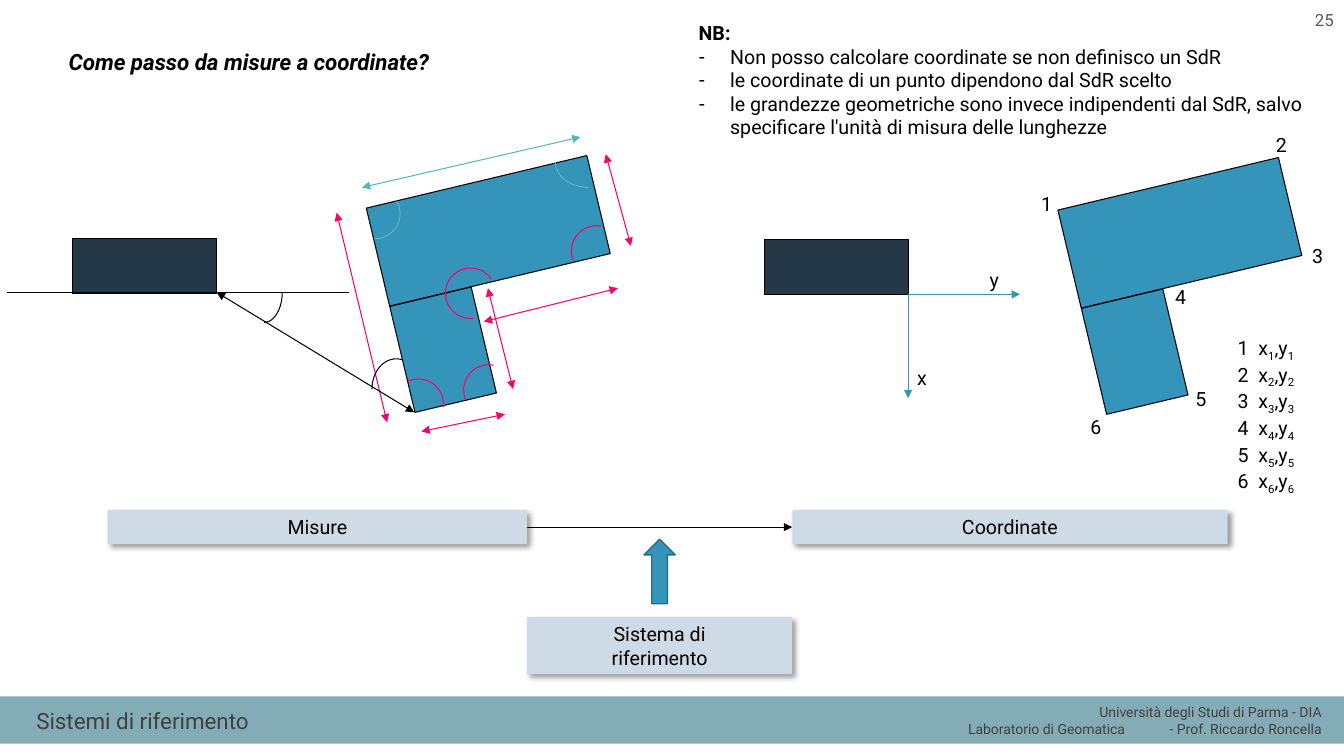
"""Build the slide that leads from measurements to coordinates."""
import pptx
import pptx.util
import pptx.dml.color
import pptx.enum.shapes
import pptx.enum.text
import pptx.oxml
import pptx.oxml.ns

Pt = pptx.util.Pt
MSO_SHAPE = pptx.enum.shapes.MSO_SHAPE
PP_ALIGN = pptx.enum.text.PP_ALIGN
MSO_ANCHOR = pptx.enum.text.MSO_ANCHOR
FONT = "Roboto"
COLORS = {
    "black": "000000", "grey": "404040", "number": "595959", "band": "84ACB6",
    "blue": "3494BA", "edge": "266D8A", "dark": "253848", "pale": "CEDBE6",
    "pink": "FF0066", "teal": "58B6C0",
}
SHADOW = (
    '<a:effectLst %s><a:outerShdw blurRad="50800" dist="38100" dir="2700000" '
    'algn="tl" rotWithShape="0"><a:srgbClr val="000000"><a:alpha val="40000"/>'
    '</a:srgbClr></a:outerShdw></a:effectLst>' % pptx.oxml.ns.nsdecls("a")
)


def rgb(name):
    return pptx.dml.color.RGBColor.from_string(COLORS[name])


def add_xml(parent, tag, **attrs):
    el = pptx.oxml.parse_xml("<a:%s %s/>" % (tag, pptx.oxml.ns.nsdecls("a")))
    for key, value in attrs.items():
        el.set(key, str(value))
    parent.append(el)
    return el


def style_run(r, size, color="black", bold=False, italic=False):
    r.font.name, r.font.size = FONT, Pt(size)
    r.font.bold, r.font.italic = bold, italic
    r.font.color.rgb = rgb(color)


def write(sp, lines, size, color="black", align=PP_ALIGN.LEFT,
          anchor=MSO_ANCHOR.TOP, bold=False, italic=False):
    tf = sp.text_frame
    tf.text = "\n".join(lines)
    tf.word_wrap = True
    tf.auto_size = pptx.enum.text.MSO_AUTO_SIZE.NONE
    tf.vertical_anchor = anchor
    for p in tf.paragraphs:
        p.alignment = align
        p.space_before = Pt(0)
        for r in p.runs:
            style_run(r, size, color, bold, italic)
    return tf


def place(sp, x, y, w, h):
    sp.left, sp.top, sp.width, sp.height = Pt(x), Pt(y), Pt(w), Pt(h)


def set_bullet(p, char=None, indent=0):
    pPr = p._p.get_or_add_pPr()
    pPr.set("marL", str(Pt(indent)))
    pPr.set("indent", str(-Pt(indent)))
    if char:
        add_xml(pPr, "buFontTx")
        add_xml(pPr, "buChar", char=char)
    else:
        add_xml(pPr, "buNone")


def add_text(shapes, x, y, w, h, lines, size, **style):
    sp = shapes.add_textbox(Pt(x), Pt(y), Pt(w), Pt(h))
    write(sp, lines, size, **style)
    return sp


def add_block(shapes, kind, x, y, w, h, fill=None, line=None, width=0.75):
    sp = shapes.add_shape(kind, Pt(x), Pt(y), Pt(w), Pt(h))
    sp.shadow.inherit = False
    if fill:
        sp.fill.solid()
        sp.fill.fore_color.rgb = rgb(fill)
    else:
        sp.fill.background()
    if line:
        sp.line.color.rgb = rgb(line)
        sp.line.width = Pt(width)
    else:
        sp.line.fill.background()
    return sp


def add_caption(shapes, x, y, w, h, lines):
    sp = add_block(shapes, MSO_SHAPE.RECTANGLE, x, y, w, h, "pale")
    spPr = sp._element.spPr
    spPr.remove(spPr.find(pptx.oxml.ns.qn("a:effectLst")))
    spPr.append(pptx.oxml.parse_xml(SHADOW))
    write(sp, lines, 14, align=PP_ALIGN.CENTER, anchor=MSO_ANCHOR.MIDDLE)
    return sp


def add_line(shapes, x1, y1, x2, y2, color, width=0.75, ends=()):
    line = shapes.add_connector(pptx.enum.shapes.MSO_CONNECTOR.STRAIGHT,
                                Pt(x1), Pt(y1), Pt(x2), Pt(y2))
    line.line.color.rgb = rgb(color)
    line.line.width = Pt(width)
    for end in ends:
        add_xml(line.line._get_or_add_ln(), end, type="triangle")
    add_xml(line._element.spPr, "effectLst")
    return line


def add_arc(shapes, cx, cy, rx, ry, start, end, color):
    sp = add_block(shapes, MSO_SHAPE.ARC, cx - rx, cy - ry, 2 * rx, 2 * ry, line=color)
    for i, angle in enumerate((start, end)):
        sp.adjustments[i] = angle * 0.6


def add_building(shapes, x, y):
    for dx, dy, w, h in ((0, 0, 162, 72), (18.8, 82, 59.8, 77.8)):
        sp = add_block(shapes, MSO_SHAPE.RECTANGLE, x + dx, y + dy, w, h, "blue", "black")
        sp.rotation = 346.6


def add_reference(shapes, x, y):
    add_block(shapes, MSO_SHAPE.RECTANGLE, x, y, 103, 38.9, "dark", "black")


def add_measures(s):
    both = ("headEnd", "tailEnd")
    shapes = s.shapes.add_group_shape().shapes
    add_building(shapes, 267.8, 128.9)
    for x1, y1, x2, y2, color in (
        (240.5, 151.9, 276.5, 301.7, "pink"),
        (432.7, 110.2, 450.7, 175.7, "pink"),
        (301, 308.2, 360.7, 295.9, "pink"),
        (348.5, 205.9, 366.5, 277.9, "pink"),
        (345.6, 229.7, 441.4, 205.9, "pink"),
        (258.5, 133.9, 414.7, 97.9, "teal"),
    ):
        add_line(shapes, x1, y1, x2, y2, color, ends=both)
    for cx, cy, rx, start, end, color in (
        (298.8, 288.7, 18, 246.5, 7, "pink"),
        (336.2, 209.5, 18, 85, 326, "pink"),
        (349.2, 278.6, 18, 158.6, 281, "pink"),
        (426.2, 179.3, 18, 158.6, 281, "pink"),
        (267.8, 152.6, 18, 331, 92, "teal"),
        (420.5, 115.9, 23.8, 90, 180, "teal"),
    ):
        add_arc(shapes, cx, cy, rx, 18, start, end, color)

    shapes = s.shapes.add_group_shape().shapes
    add_reference(shapes, 51.8, 170.6)
    add_line(shapes, 154.8, 208.8, 295.9, 294.5, "black", ends=both)
    add_line(shapes, 5, 208.8, 249.1, 208.8, "black")
    add_arc(shapes, 188.6, 208.8, 13, 21.6, 0, 90, "black")
    add_arc(shapes, 283, 277.9, 17.3, 21.6, 180, 282, "black")


def add_coordinates(s):
    add_building(s.shapes.add_group_shape().shapes, 761.8, 130.3)
    add_reference(s.shapes, 545.8, 171.4)
    for x, y in ((728.6, 210.2), (648.7, 284.4)):
        add_line(s.shapes, 648.7, 210.2, x, y, "blue", 0.5, ("tailEnd",))
    for label, x, y in (
        ("y", 699.8, 187.9), ("x", 648, 257.8), ("1", 736.6, 133.9),
        ("2", 904.3, 91.4), ("3", 930.2, 170.6), ("4", 832.3, 200.2),
        ("5", 846.7, 272.9), ("6", 771.8, 293),
    ):
        add_text(s.shapes, x, y, 18, 24.5, [label], 14)

    numbers = "123456"
    sp = add_text(s.shapes, 877, 236.2, 56, 108.7, [n + "\tx" for n in numbers], 14)
    sp.text_frame.margin_right = 0
    for n, p in zip(numbers, sp.text_frame.paragraphs):
        tabs = add_xml(p._p.get_or_add_pPr(), "tabLst")
        add_xml(tabs, "tab", pos=Pt(14.8), algn="l")
        for text in (n, ",y", n):
            r = p.add_run()
            r.text = text
            style_run(r, 14)
            if text == n:
                r._r.get_or_add_rPr().set("baseline", "-25000")


def add_scheme(s):
    coordinate = add_caption(s.shapes, 565.9, 364.3, 311, 24.5, ["Coordinate"])
    add_caption(s.shapes, 376.5, 440.6, 189.4, 41, ["Sistema di", "riferimento"])
    misure = add_caption(s.shapes, 77, 364.3, 299.5, 24.5, ["Misure"])
    line = add_line(s.shapes, 376.5, 376.5, 565.9, 376.5, "black", 0.5, ("tailEnd",))
    line.begin_connect(misure, 3)
    line.end_connect(coordinate, 1)
    add_block(s.shapes, MSO_SHAPE.UP_ARROW, 460, 385.2, 22.3, 46.1, "blue", "edge", 1)


def add_frame(s):
    band = add_block(s.shapes, MSO_SHAPE.RECTANGLE, 0, 497.5, 960, 33.8, "band")
    s.shapes._spTree.insert(2, band._element)
    add_text(s.shapes, 652.3, 499, 298.8, 31.7,
             ["Università degli Studi di Parma - DIA",
              "Laboratorio di Geomatica\t- Prof. Riccardo Roncella"],
             10, color="grey", align=PP_ALIGN.RIGHT)
    add_text(s.shapes, 907.2, 0, 52.6, 28.8, ["25"], 12, color="number",
             align=PP_ALIGN.RIGHT, anchor=MSO_ANCHOR.MIDDLE)


def fill_placeholders(s):
    title, question, notes = s.placeholders
    place(title, 18.7, 500.4, 523.4, 28.8)
    write(title, ["Sistemi di riferimento"], 16, "grey", anchor=MSO_ANCHOR.MIDDLE)
    place(question, 41.8, 33.1, 425.5, 87.1)
    tf = write(question, ["Come passo da misure a coordinate?"], 16, bold=True, italic=True)
    tf.paragraphs[0].line_spacing = 0.9
    set_bullet(tf.paragraphs[0])
    place(notes, 491.8, 11.5, 460, 92.2)
    tf = write(notes, [
        "NB:",
        "Non posso calcolare coordinate se non definisco un SdR",
        "le coordinate di un punto dipendono dal SdR scelto",
        "le grandezze geometriche sono invece indipendenti dal SdR, salvo "
        "specificare l'unità di misura delle lunghezze"], 14)
    heading, *points = tf.paragraphs
    heading.runs[0].font.bold = True
    set_bullet(heading)
    for p in points:
        set_bullet(p, "-", 22.5)


def main():
    prs = pptx.Presentation()
    prs.slide_width, prs.slide_height = Pt(960), Pt(540)
    s = prs.slides.add_slide(prs.slide_layouts[3])
    fill_placeholders(s)
    add_frame(s)
    add_measures(s)
    add_coordinates(s)
    add_scheme(s)
    prs.save("out.pptx")


if __name__ == "__main__":
    main()
